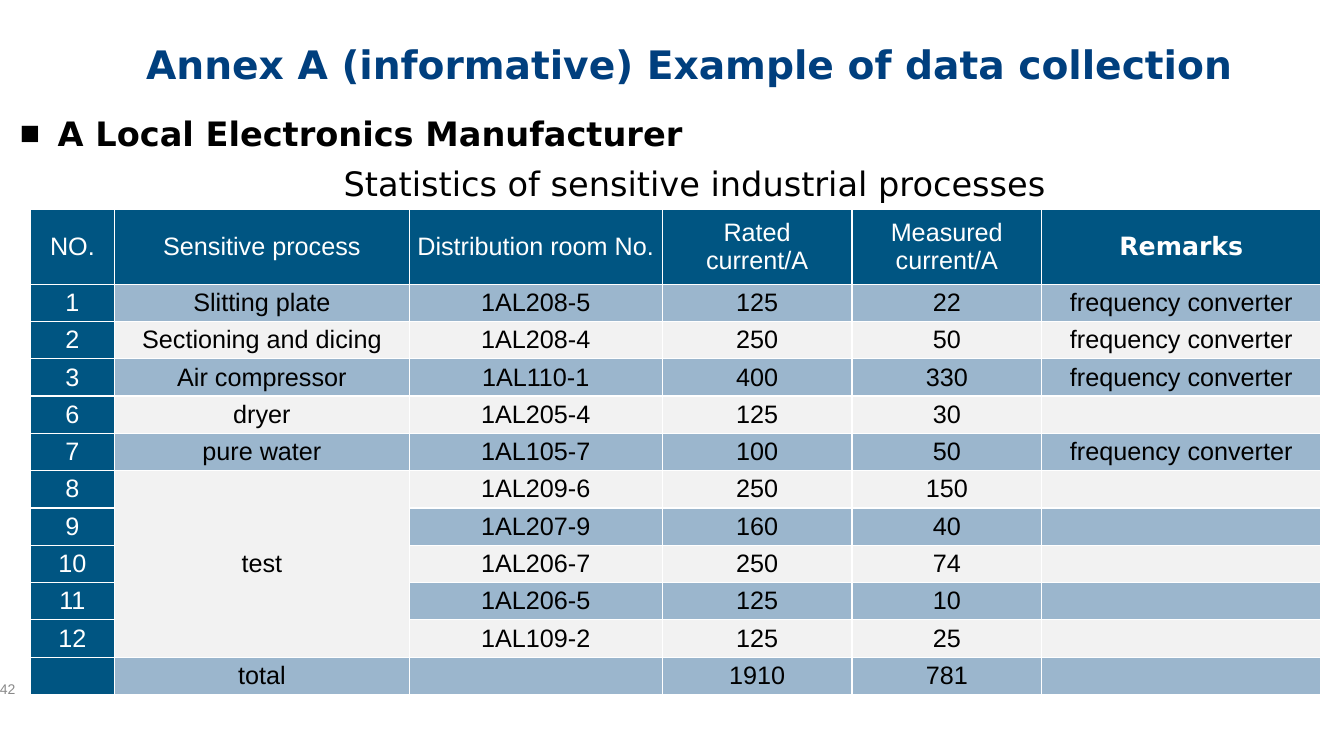
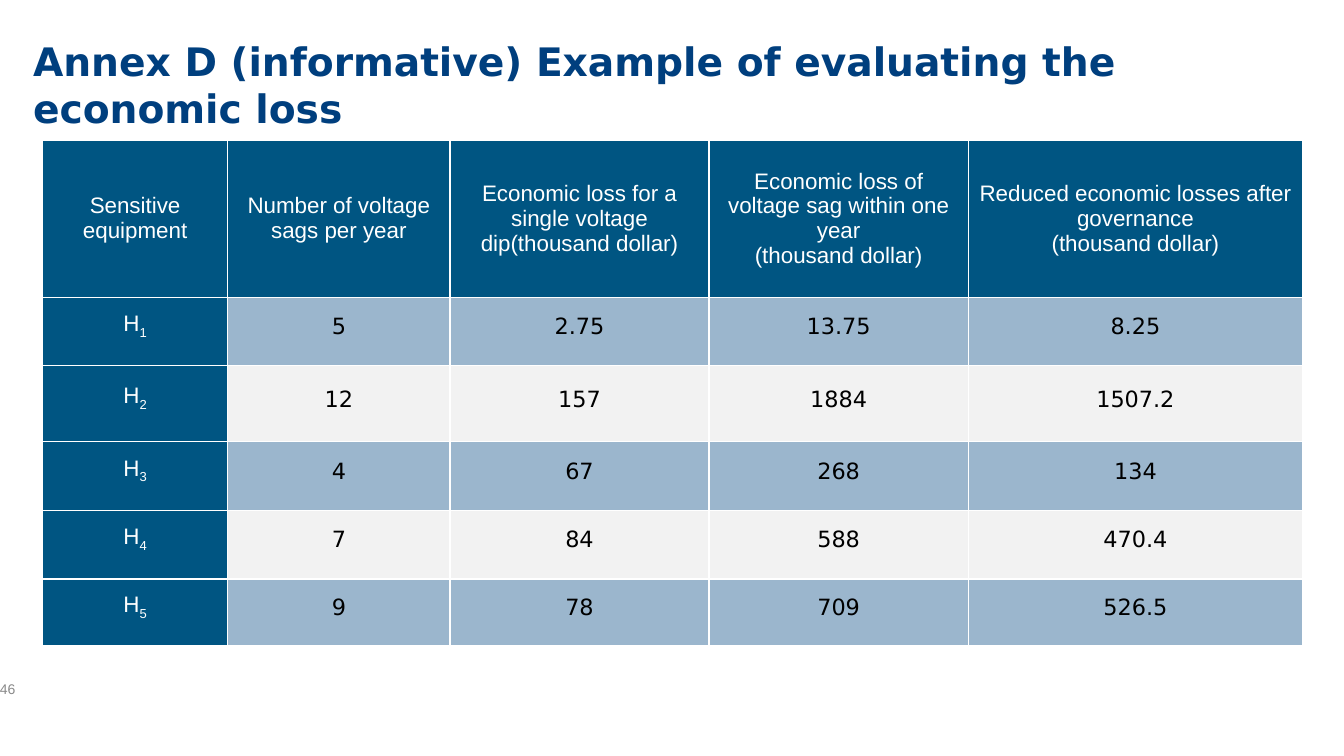
"""Build two annex slides: sensitive process statistics and economic loss."""
from lxml import etree
from pptx import Presentation
from pptx.dml.color import RGBColor
from pptx.enum import text
from pptx.oxml import ns
from pptx.util import Cm, Pt

NAVY, BLUE, BAND, PALE = "003F7E", "005582", "9BB6CD", "F2F2F2"
WHITE, BLACK, GREY = "FFFFFF", "000000", "898989"
SANS, ARIAL = "DejaVu Sans", "Arial"


def style(tf, size, color, font=SANS, bold=False, align=text.PP_ALIGN.LEFT, line=None):
    for p in tf.paragraphs:
        p.alignment = align
        p.space_before = Pt(0)
        if line:
            p.line_spacing = Pt(line)
        for r in p.runs:
            r.font.name, r.font.size, r.font.bold = font, Pt(size), bold
            r.font.color.rgb = RGBColor.from_string(color)


def add_grid(s, rows, left, top, widths, heights, size, line, head_line, body_font):
    frame = s.shapes.add_table(len(rows), len(widths), Cm(left), Cm(top),
                               Cm(sum(widths)), Cm(sum(heights)))
    table = frame.table
    table.first_col, table.horz_banding = True, False
    for column, width in zip(table.columns, widths):
        column.width = Cm(width)
    for i, values in enumerate(rows):
        table.rows[i].height = Cm(heights[i])
        for j, value in enumerate(values):
            cell = table.cell(i, j)
            head = i == 0 or j == 0
            cell.text = value
            cell.vertical_anchor = text.MSO_ANCHOR.MIDDLE
            cell.margin_left = cell.margin_right = Cm(0.18)
            cell.margin_top = cell.margin_bottom = 0
            cell.fill.solid()
            cell.fill.fore_color.rgb = RGBColor.from_string(
                BLUE if head else BAND if i % 2 else PALE)
            style(cell.text_frame, size, WHITE if head else BLACK,
                  ARIAL if head else body_font, align=text.PP_ALIGN.CENTER,
                  line=line if i else head_line)
    return table


prs = Presentation()
prs.slide_width, prs.slide_height = Cm(33.87), Cm(19.05)

slides = []
for layout, title, left, top, number in [
    (1, "Annex A (informative) Example of data collection", 3.43, 0.89, "42"),
    (5, "Annex D (informative) Example of evaluating the economic loss", 0.58, 0.81, "46"),
]:
    s = prs.slides.add_slide(prs.slide_layouts[layout])
    sp = s.shapes.title
    sp.left, sp.top, sp.width, sp.height = Cm(left), Cm(top), Cm(28.96), Cm(1.5)
    tf = sp.text_frame
    tf.text = title
    tf.auto_size = text.MSO_AUTO_SIZE.NONE
    tf.vertical_anchor = text.MSO_ANCHOR.TOP
    style(tf, 28, NAVY, bold=True)

    tf = s.shapes.add_textbox(Cm(-0.25), Cm(16.84), Cm(2.54), Cm(1.02)).text_frame
    tf.text = number
    tf.word_wrap = True
    tf.vertical_anchor = text.MSO_ANCHOR.MIDDLE
    style(tf, 10, GREY, ARIAL)
    slides.append(s)

s = slides[0]
sp = s.placeholders[1]
sp.left, sp.top, sp.width, sp.height = Cm(0.25), Cm(2.72), Cm(23.55), Cm(1.27)
tf = sp.text_frame
tf.text = "A Local Electronics Manufacturer"
tf.auto_size = text.MSO_AUTO_SIZE.NONE
pPr = tf.paragraphs[0]._p.get_or_add_pPr()
pPr.set("marL", str(Cm(0.95)))
pPr.set("indent", str(Cm(-0.95)))
etree.SubElement(pPr, ns.qn("a:buFont")).set("typeface", ARIAL)
etree.SubElement(pPr, ns.qn("a:buChar")).set("char", "■")
style(tf, 24, BLACK, bold=True)

tf = s.shapes.add_textbox(Cm(8.41), Cm(3.99), Cm(20.22), Cm(1.27)).text_frame
tf.text = "Statistics of sensitive industrial processes"
tf.word_wrap = True
style(tf, 24, BLACK)

processes = [
    ("NO.", "Sensitive process", "Distribution room No.", "Rated current/A",
     "Measured current/A", "Remarks"),
    ("1", "Slitting plate", "1AL208-5", "125", "22", "frequency converter"),
    ("2", "Sectioning and dicing", "1AL208-4", "250", "50", "frequency converter"),
    ("3", "Air compressor", "1AL110-1", "400", "330", "frequency converter"),
    ("6", "dryer", "1AL205-4", "125", "30", ""),
    ("7", "pure water", "1AL105-7", "100", "50", "frequency converter"),
    ("8", "test", "1AL209-6", "250", "150", ""),
    ("9", "", "1AL207-9", "160", "40", ""),
    ("10", "", "1AL206-7", "250", "74", ""),
    ("11", "", "1AL206-5", "125", "10", ""),
    ("12", "", "1AL109-2", "125", "25", ""),
    ("", "total", "", "1910", "781", ""),
]
table = add_grid(s, processes, 0.76, 5.28, [2.13, 7.42, 6.38, 4.78, 4.78, 7.04],
                 [1.88] + [0.94] * 11, 18, 20, 20, ARIAL)
table.cell(6, 1).merge(table.cell(10, 1))
p = table.cell(0, 5).text_frame.paragraphs[0]
p.line_spacing = None
p.runs[0].font.name, p.runs[0].font.bold = SANS, True

losses = [
    ("Sensitive equipment", "Number of voltage sags per year",
     "Economic loss for a single voltage dip(thousand dollar)",
     "Economic loss of voltage sag within one year\n(thousand dollar)",
     "Reduced economic losses after governance\n(thousand dollar)"),
    ("H", "5", "2.75", "13.75", "8.25"),
    ("H", "12", "157", "1884", "1507.2"),
    ("H", "4", "67", "268", "134"),
    ("H", "7", "84", "588", "470.4"),
    ("H", "9", "78", "709", "526.5"),
]
table = add_grid(slides[1], losses, 1.07, 3.53, [4.67, 5.6, 6.53, 6.53, 8.43],
                 [3.96, 1.73, 1.91, 1.73, 1.73, 1.68], 16, 12, None, SANS)
for i in range(1, len(losses)):
    tf = table.cell(i, 0).text_frame
    r = tf.paragraphs[0].add_run()
    r.text = str(i)
    style(tf, 16, WHITE, ARIAL, align=text.PP_ALIGN.CENTER, line=12)
    r._r.get_or_add_rPr().set("baseline", "-25000")

prs.save("out.pptx")
